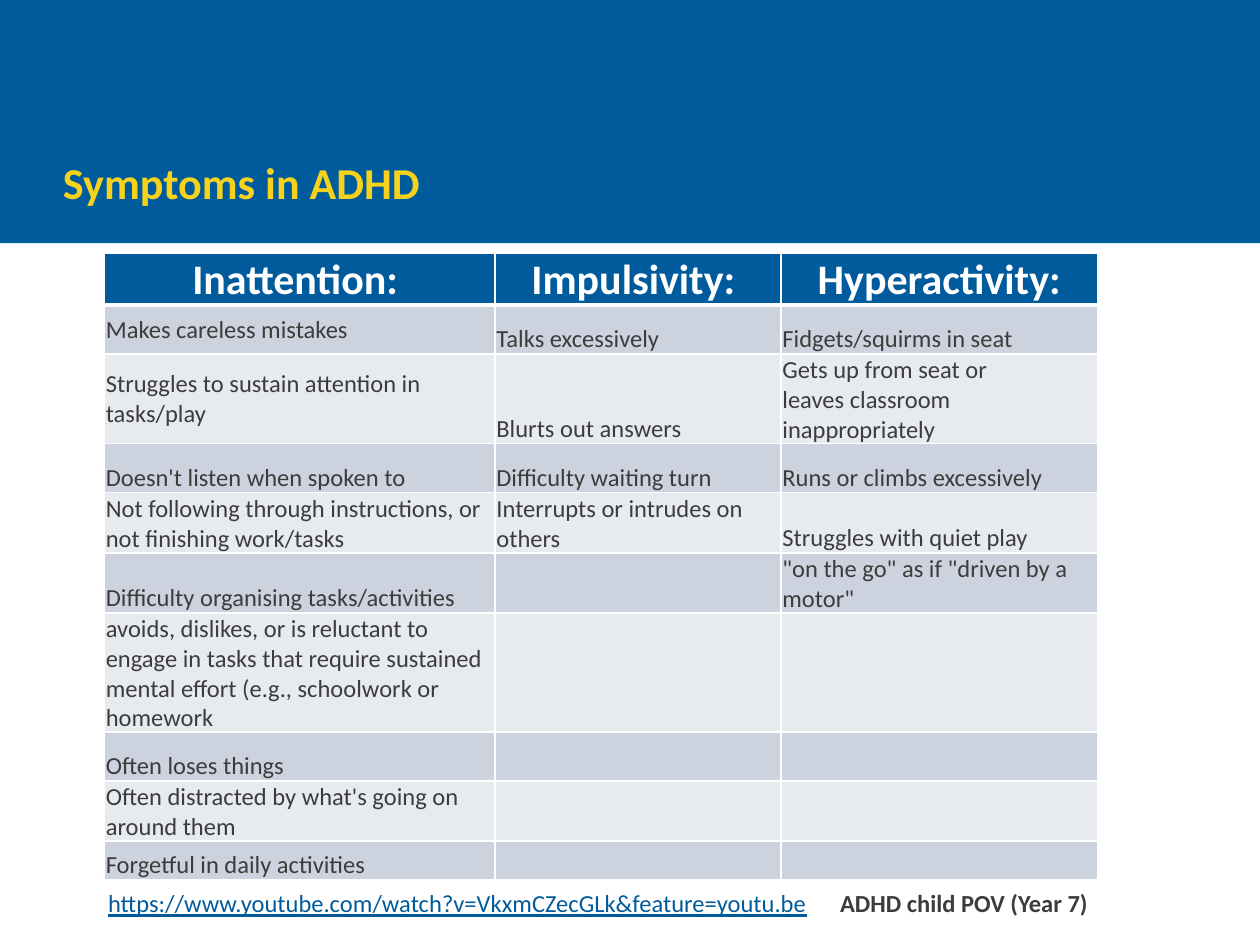
import pptx
import pptx.util
import pptx.dml.color
import pptx.enum.shapes
import pptx.enum.text
import pptx.oxml.ns
from lxml import etree

Inches = pptx.util.Inches
Pt = pptx.util.Pt
Anchor = pptx.enum.text.MSO_ANCHOR
Align = pptx.enum.text.PP_ALIGN
qn = pptx.oxml.ns.qn

COLORS = {
    "blue": "005B9C",
    "yellow": "F6D21C",
    "dark": "3C3C3B",
    "white": "FFFFFF",
    "band_dark": "CCD2DE",
    "band_light": "E7EAEF",
}
COLUMN_WIDTHS = [3.1, 2.27, 2.51]
ROW_HEIGHTS = [0.39, 0.39, 0.68, 0.39, 0.46, 0.46, 0.9, 0.39, 0.46, 0.31]
SYMPTOMS = [
    ["Inattention: ", "Impulsivity: ", "Hyperactivity:"],
    ["Makes careless mistakes", "Talks excessively", "Fidgets/squirms in seat"],
    ["Struggles to sustain attention in tasks/play", "Blurts out answers",
     "Gets up from seat or \nleaves classroom inappropriately"],
    ["Doesn't listen when spoken to", "Difficulty waiting turn", "Runs or climbs excessively"],
    ["Not following through instructions, or not finishing work/tasks",
     "Interrupts or intrudes on others", "Struggles with quiet play"],
    ["Difficulty organising tasks/activities", "", '"on the go" as if "driven by a motor"'],
    ["avoids, dislikes, or is reluctant to engage in tasks that require sustained "
     "mental effort (e.g., schoolwork or homework", "", ""],
    ["Often loses things", "", ""],
    ["Often distracted by what's going on around them", "", ""],
    ["Forgetful in daily activities", "", ""],
]


def rgb(name):
    return pptx.dml.color.RGBColor.from_string(COLORS[name])


def add_text(para, text, size=14, color="dark", bold=False, underline=False):
    for index, line in enumerate(text.split("\n")):
        if index:
            para.add_line_break()
        span = para.add_run()
        span.text = line
        span.font.name = "Calibri"
        span.font.size = Pt(size)
        span.font.color.rgb = rgb(color)
        span.font.bold = bold
        span.font.underline = underline


class SlideBuilder:
    """Holds the current slide and draws each kind of element in one style."""

    def __init__(self, page):
        self.page = page

    def band(self, left, top, width, height):
        shape = self.page.shapes.add_shape(
            pptx.enum.shapes.MSO_SHAPE.RECTANGLE,
            Inches(left), Inches(top), Inches(width), Inches(height))
        shape.shadow.inherit = False
        shape.fill.solid()
        shape.fill.fore_color.rgb = rgb("blue")
        shape.line.fill.background()

    def text_box(self, left, top, width, height, anchor=Anchor.TOP, inset=None, tab=None):
        box = self.page.shapes.add_textbox(
            Inches(left), Inches(top), Inches(width), Inches(height))
        frame = box.text_frame
        frame.word_wrap = True
        frame.vertical_anchor = anchor
        if inset is not None:
            frame.margin_left = frame.margin_right = Inches(inset)
            frame.margin_top = frame.margin_bottom = Inches(inset)
        para = frame.paragraphs[0]
        if tab is not None:
            stops = etree.SubElement(para._p.get_or_add_pPr(), qn("a:tabLst"))
            etree.SubElement(stops, qn("a:tab"), pos=str(Inches(tab)), algn="l")
        return para

    def cell_borders(self, cell, widths):
        properties = cell._tc.get_or_add_tcPr()
        for side, width in widths.items():
            line = etree.SubElement(properties, qn(f"a:ln{side}"), w=str(Pt(width)))
            fill = etree.SubElement(line, qn("a:solidFill"))
            etree.SubElement(fill, qn("a:srgbClr"), val=COLORS["white"])

    def table(self, left, top, rows, widths, heights):
        frame = self.page.shapes.add_table(
            len(rows), len(widths), Inches(left), Inches(top),
            Inches(sum(widths)), Inches(sum(heights)))
        table = frame.table
        for column, width in zip(table.columns, widths):
            column.width = Inches(width)
        for row, height in zip(table.rows, heights):
            row.height = Inches(height)
        for r, row in enumerate(rows):
            for c, text in enumerate(row):
                self.cell(table.cell(r, c), r, c, text)

    def cell(self, cell, row, column, text):
        header = row == 0
        self.cell_borders(cell, {"L": 1, "R": 1, "T": 3 if row == 1 else 1,
                                 "B": 3 if header else 1})
        cell.fill.solid()
        band = "band_dark" if row % 2 else "band_light"
        cell.fill.fore_color.rgb = rgb("blue" if header else band)
        cell.margin_left = cell.margin_right = cell.margin_top = Inches(0.01)
        cell.margin_bottom = 0
        centred = header or (column == 0 and row < 3)
        cell.vertical_anchor = Anchor.MIDDLE if centred else Anchor.BOTTOM
        para = cell.text_frame.paragraphs[0]
        if header:
            para.alignment = Align.CENTER
            add_text(para, text, size=24, color="white", bold=True)
        elif text:
            add_text(para, text)


def main():
    deck = pptx.Presentation()
    deck.slide_width = Inches(10)
    deck.slide_height = Inches(7.5)
    builder = SlideBuilder(deck.slides.add_slide(deck.slide_layouts[6]))

    builder.band(0, 0, 10, 1.93)
    title = builder.text_box(0.5, 0.37, 9, 1.28, anchor=Anchor.BOTTOM, inset=0)
    add_text(title, "Symptoms in ADHD", size=25.2, color="yellow", bold=True)

    footer = builder.text_box(0.76, 7, 9, 0.52, tab=5.81)
    add_text(footer, "https://www.youtube.com/watch?v=VkxmCZecGLk&feature=youtu.be",
             color="blue", underline=True)
    add_text(footer, "\tADHD child POV (Year 7)", bold=True)

    builder.table(0.83, 2.01, SYMPTOMS, COLUMN_WIDTHS, ROW_HEIGHTS)
    deck.save("out.pptx")


if __name__ == "__main__":
    main()
